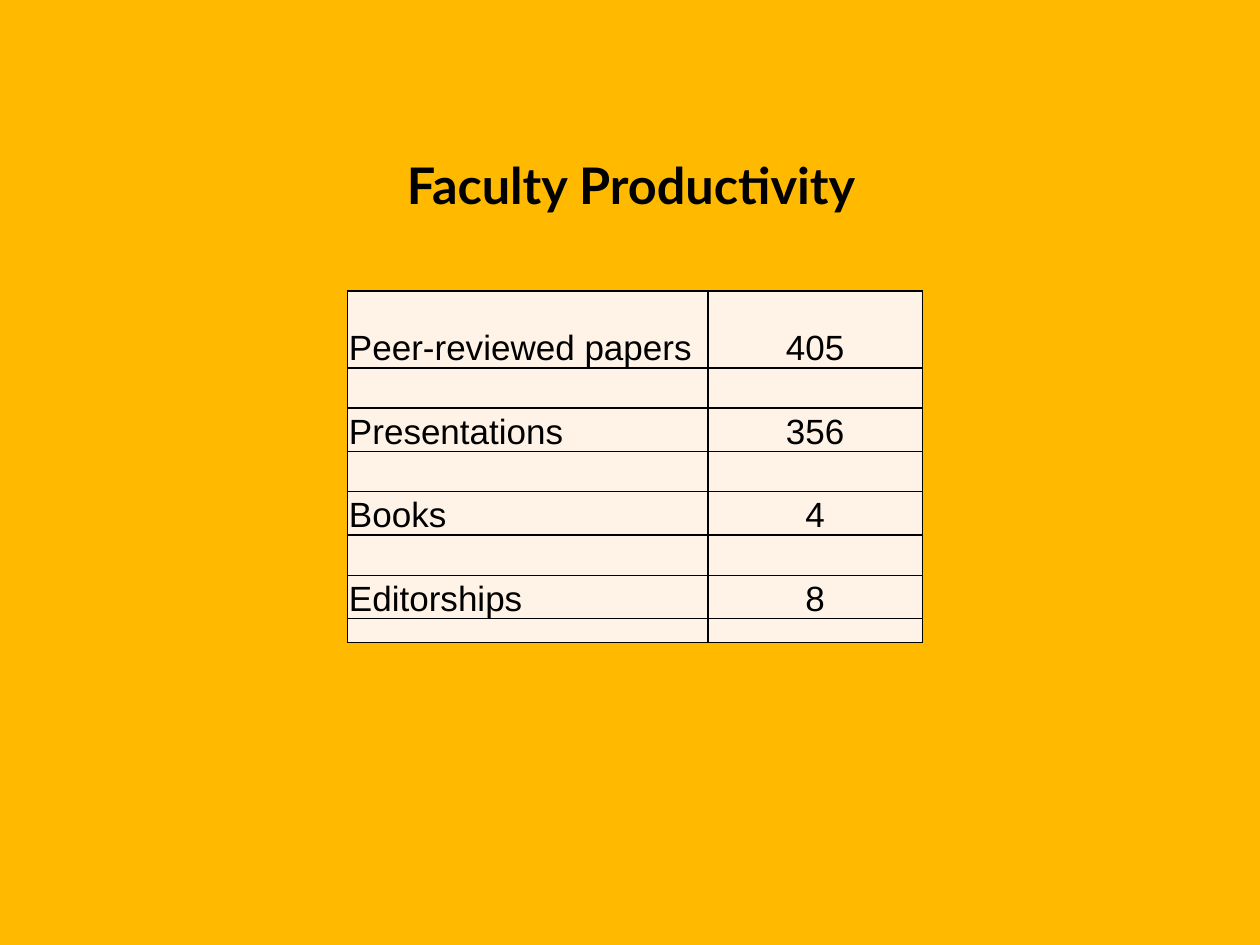
from typing import NamedTuple

import pptx
import pptx.dml.color
import pptx.enum.text
import pptx.oxml.ns
import pptx.util
from lxml import etree

Inches = pptx.util.Inches
Pt = pptx.util.Pt
RGBColor = pptx.dml.color.RGBColor
ALIGN = pptx.enum.text.PP_ALIGN
ANCHOR = pptx.enum.text.MSO_ANCHOR
qn = pptx.oxml.ns.qn

AMBER = RGBColor(0xFF, 0xBA, 0x00)
CREAM = RGBColor(0xFF, 0xF3, 0xE7)
BLACK = RGBColor(0x00, 0x00, 0x00)

TITLE_FONT = {"name": "Lato", "size": Pt(28.8), "bold": True}
CELL_FONT = {"name": "Arial", "size": Pt(20), "bold": False}
CELL_FORMAT = {
    "margin_left": Inches(0.01),
    "margin_right": Inches(0.01),
    "margin_top": Inches(0.01),
    "margin_bottom": 0,
    "vertical_anchor": ANCHOR.BOTTOM,
}
COLUMN_WIDTHS = (2.86, 1.7)
COLUMN_ALIGNMENTS = (ALIGN.LEFT, ALIGN.CENTER)
FIRST_HEIGHT, ROW_HEIGHT, LAST_HEIGHT = 0.61, 0.32, 0.19


class Output(NamedTuple):
    kind: str
    count: int


OUTPUTS = (
    Output("Peer-reviewed papers", 405),
    Output("Presentations", 356),
    Output("Books", 4),
    Output("Editorships", 8),
)


def apply_format(target: object, values: dict) -> None:
    for name, value in values.items():
        setattr(target, name, value)


def write_text(para, text: str, font: dict, alignment) -> None:
    para.alignment = alignment
    span = para.add_run()
    span.text = text
    apply_format(span.font, font)
    span.font.color.rgb = BLACK


def add_title(slide, text: str) -> None:
    box = slide.shapes.add_textbox(Inches(2.76), Inches(1.22), Inches(4.5), Inches(0.48))
    frame = box.text_frame
    apply_format(frame, {
        "word_wrap": True,
        "vertical_anchor": ANCHOR.BOTTOM,
        "margin_left": 0,
        "margin_right": 0,
        "margin_top": 0,
        "margin_bottom": 0,
    })
    write_text(frame.paragraphs[0], text, TITLE_FONT, ALIGN.CENTER)


def add_borders(cell) -> None:
    properties = cell._tc.get_or_add_tcPr()
    for side in ("a:lnL", "a:lnR", "a:lnT", "a:lnB"):
        line = etree.SubElement(properties, qn(side), w=str(Pt(1)))
        fill = etree.SubElement(line, qn("a:solidFill"))
        etree.SubElement(fill, qn("a:srgbClr"), val=str(BLACK))


def fill_cell(cell, text: str, alignment) -> None:
    add_borders(cell)
    apply_format(cell, CELL_FORMAT)
    cell.fill.solid()
    cell.fill.fore_color.rgb = CREAM
    para = cell.text_frame.paragraphs[0]
    if text:
        write_text(para, text, CELL_FONT, alignment)
    else:
        # A small end mark lets an empty row stay low.
        etree.SubElement(para._p, qn("a:endParaRPr"), sz="1000")


def add_output_table(slide, outputs: tuple[Output, ...]) -> None:
    """Draw one row for each output, each followed by an empty spacer row."""
    row_count = 2 * len(outputs)
    heights = [FIRST_HEIGHT] + [ROW_HEIGHT] * (row_count - 2) + [LAST_HEIGHT]
    table = slide.shapes.add_table(
        row_count, len(COLUMN_WIDTHS), Inches(2.76), Inches(2.31),
        Inches(sum(COLUMN_WIDTHS)), Inches(sum(heights)),
    ).table
    apply_format(table, {"first_row": False, "horz_banding": False})
    for column, width in zip(table.columns, COLUMN_WIDTHS):
        column.width = Inches(width)
    for index, (row, height) in enumerate(zip(table.rows, heights)):
        row.height = Inches(height)
        output = outputs[index // 2]
        texts = ("", "") if index % 2 else (output.kind, str(output.count))
        for cell, text, alignment in zip(row.cells, texts, COLUMN_ALIGNMENTS):
            fill_cell(cell, text, alignment)


def main() -> None:
    deck = pptx.Presentation()
    deck.slide_width, deck.slide_height = Inches(10), Inches(7.5)
    slide = deck.slides.add_slide(deck.slide_layouts[6])
    slide.background.fill.solid()
    slide.background.fill.fore_color.rgb = AMBER
    add_title(slide, "Faculty Productivity")
    add_output_table(slide, OUTPUTS)
    deck.save("out.pptx")


if __name__ == "__main__":
    main()
